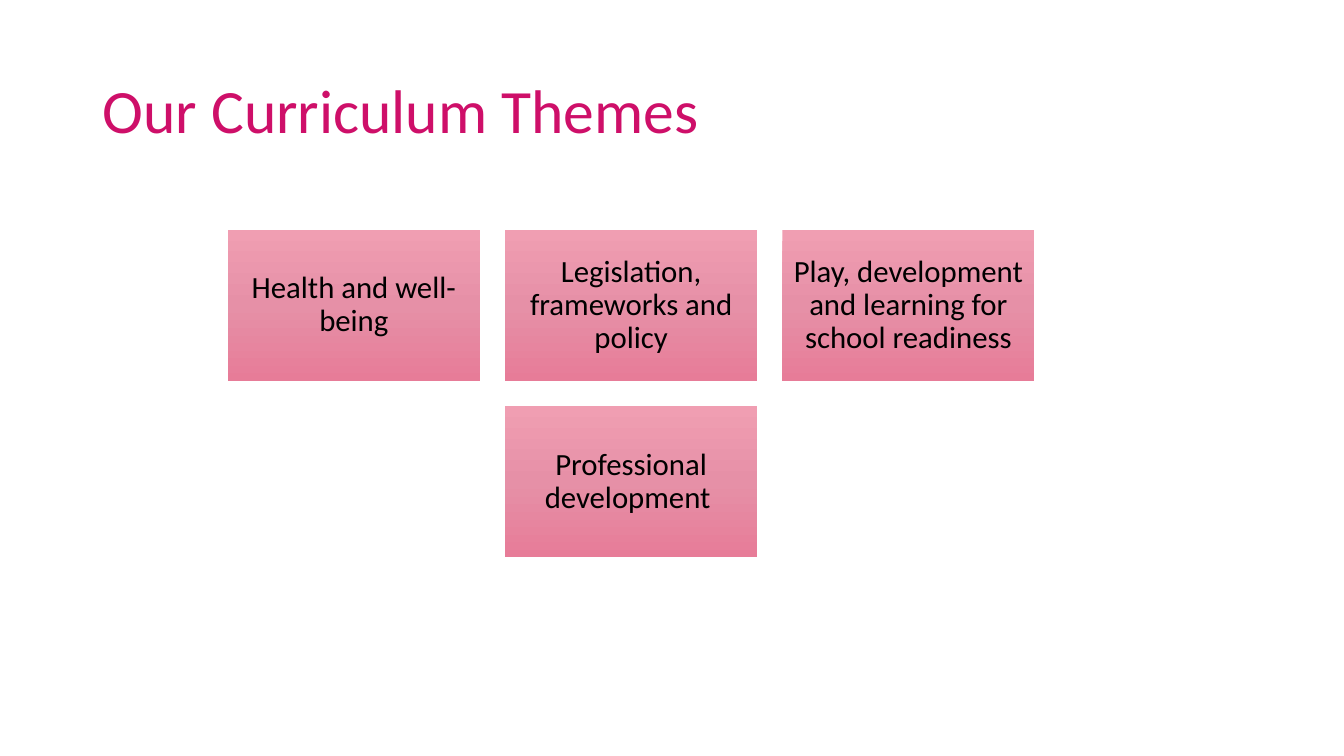
from copy import deepcopy

from pptx import Presentation
from pptx.dml.color import RGBColor
from pptx.enum.shapes import MSO_SHAPE
from pptx.enum.text import MSO_ANCHOR, PP_ALIGN
from pptx.util import Inches, Pt

MAGENTA = RGBColor(0xCE, 0x0F, 0x69)
BLACK = RGBColor(0x00, 0x00, 0x00)
PINKS = [
    RGBColor(0xF0, 0x9E, 0xB2),
    RGBColor(0xE6, 0x90, 0xA7),
    RGBColor(0xE7, 0x7C, 0x98),
]

TITLE_FONT = {"name": "Calibri", "size": Pt(44)}
THEME_FONT = {"name": "Calibri", "size": Pt(22)}

THEME_ROWS = [
    [
        "Health and well-being",
        "Legislation, frameworks and policy",
        "Play, development and learning for school readiness",
    ],
    ["Professional development "],
]
BOX_W, BOX_H, GAP = 2.5, 1.5, 0.25
GRID_CENTER, GRID_TOP = 6.26, 2.28


def write_text(sp, text, font, color, align):
    """Fill a shape with one formatted, vertically centred paragraph."""
    tf = sp.text_frame
    tf.word_wrap = True
    tf.vertical_anchor = MSO_ANCHOR.MIDDLE
    p = tf.paragraphs[0]
    p.alignment = align
    p.line_spacing = 0.9
    r = p.add_run()
    r.text = text
    for key, value in font.items():
        setattr(r.font, key, value)
    r.font.color.rgb = color


def fill_pink(sp):
    """Give a shape the three-stop vertical pink gradient."""
    sp.fill.gradient()
    sp.fill.gradient_angle = 270
    stops = sp._element.xpath(".//a:gsLst")[0]
    stops.insert(1, deepcopy(stops[0]))
    for i, (stop, color) in enumerate(zip(sp.fill.gradient_stops, PINKS)):
        stop.position = i / 2
        stop.color.rgb = color


def add_title(slide, text):
    """Place and format the title placeholder."""
    sp = slide.shapes.title
    sp.left, sp.top = Inches(0.92), Inches(0.4)
    sp.width, sp.height = Inches(11.5), Inches(1.45)
    write_text(sp, text, TITLE_FONT, MAGENTA, PP_ALIGN.LEFT)


def add_theme(slide, text, left, top):
    """Add one theme box."""
    sp = slide.shapes.add_shape(
        MSO_SHAPE.RECTANGLE, Inches(left), Inches(top), Inches(BOX_W), Inches(BOX_H)
    )
    sp.shadow.inherit = False
    sp.line.fill.background()
    fill_pink(sp)
    for side in ("left", "top", "right", "bottom"):
        setattr(sp.text_frame, f"margin_{side}", Inches(0.09))
    write_text(sp, text, THEME_FONT, BLACK, PP_ALIGN.CENTER)


def add_theme_grid(slide):
    """Lay out the theme boxes in centred rows."""
    for row, themes in enumerate(THEME_ROWS):
        row_width = len(themes) * (BOX_W + GAP) - GAP
        left = GRID_CENTER - row_width / 2
        top = GRID_TOP + row * (BOX_H + GAP)
        for col, theme in enumerate(themes):
            add_theme(slide, theme, left + col * (BOX_W + GAP), top)


def main():
    """Build and save the slide."""
    prs = Presentation()
    prs.slide_width, prs.slide_height = Inches(13.33), Inches(7.5)
    slide = prs.slides.add_slide(prs.slide_layouts[5])
    add_title(slide, "Our Curriculum Themes")
    add_theme_grid(slide)
    prs.save("out.pptx")


if __name__ == "__main__":
    main()
